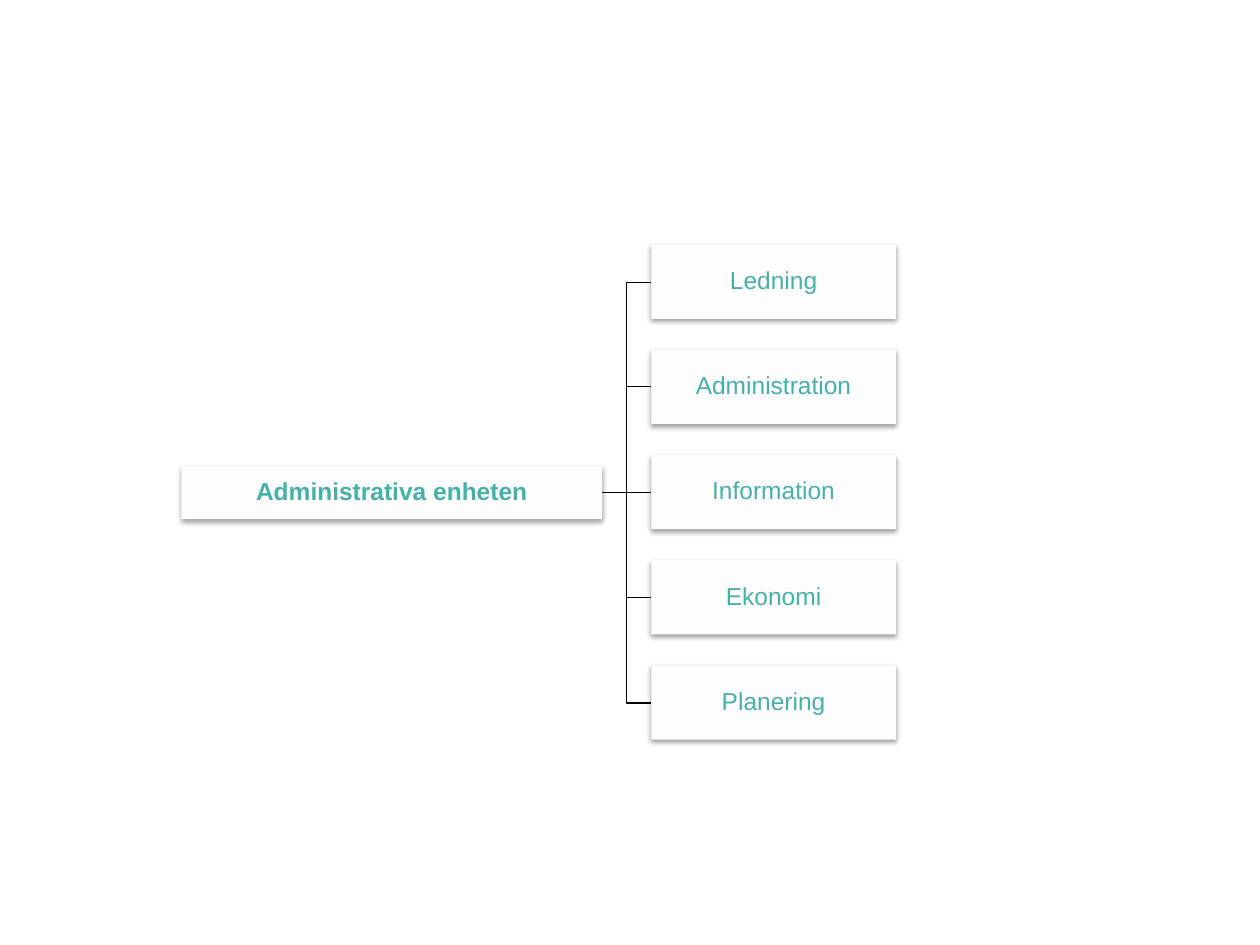
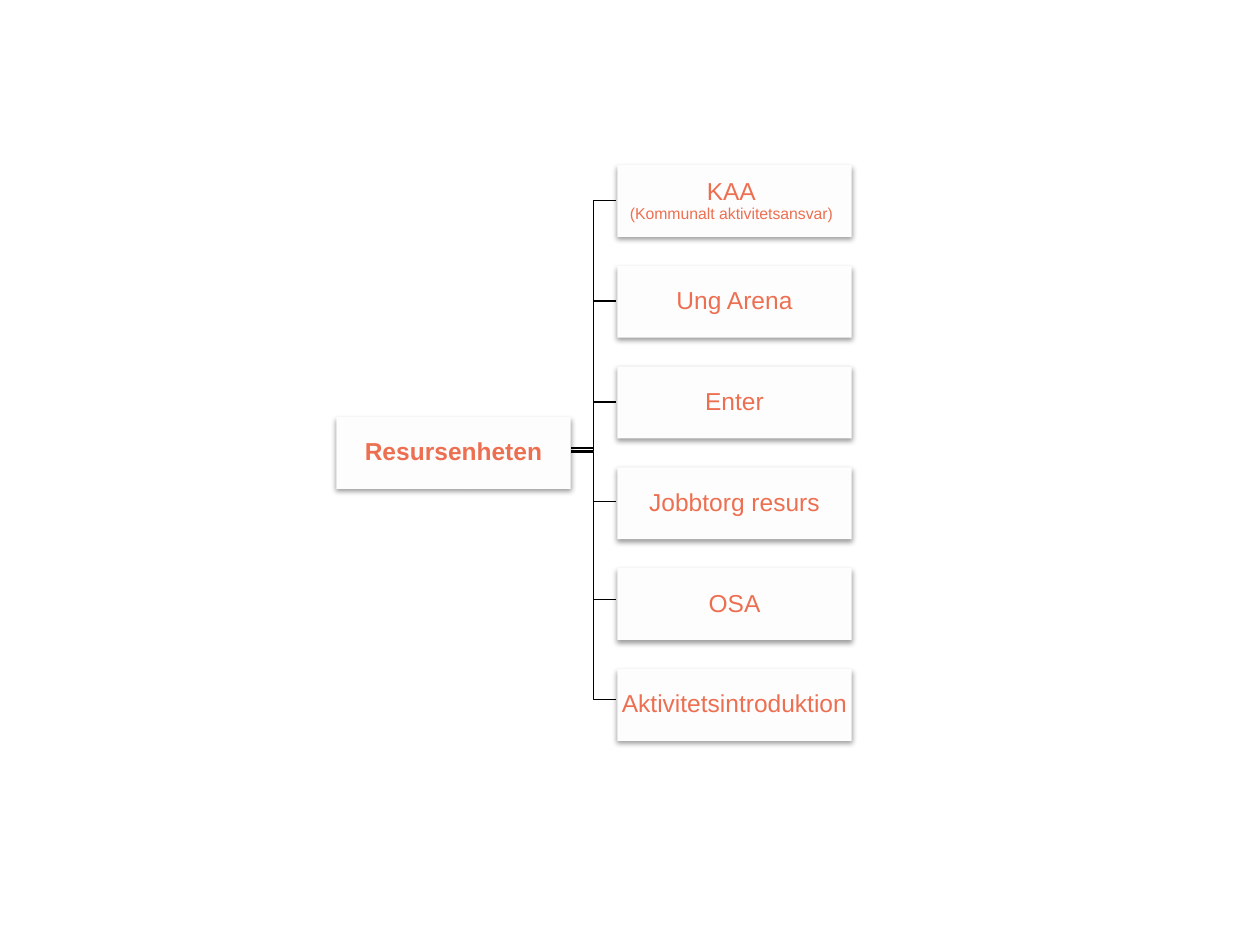
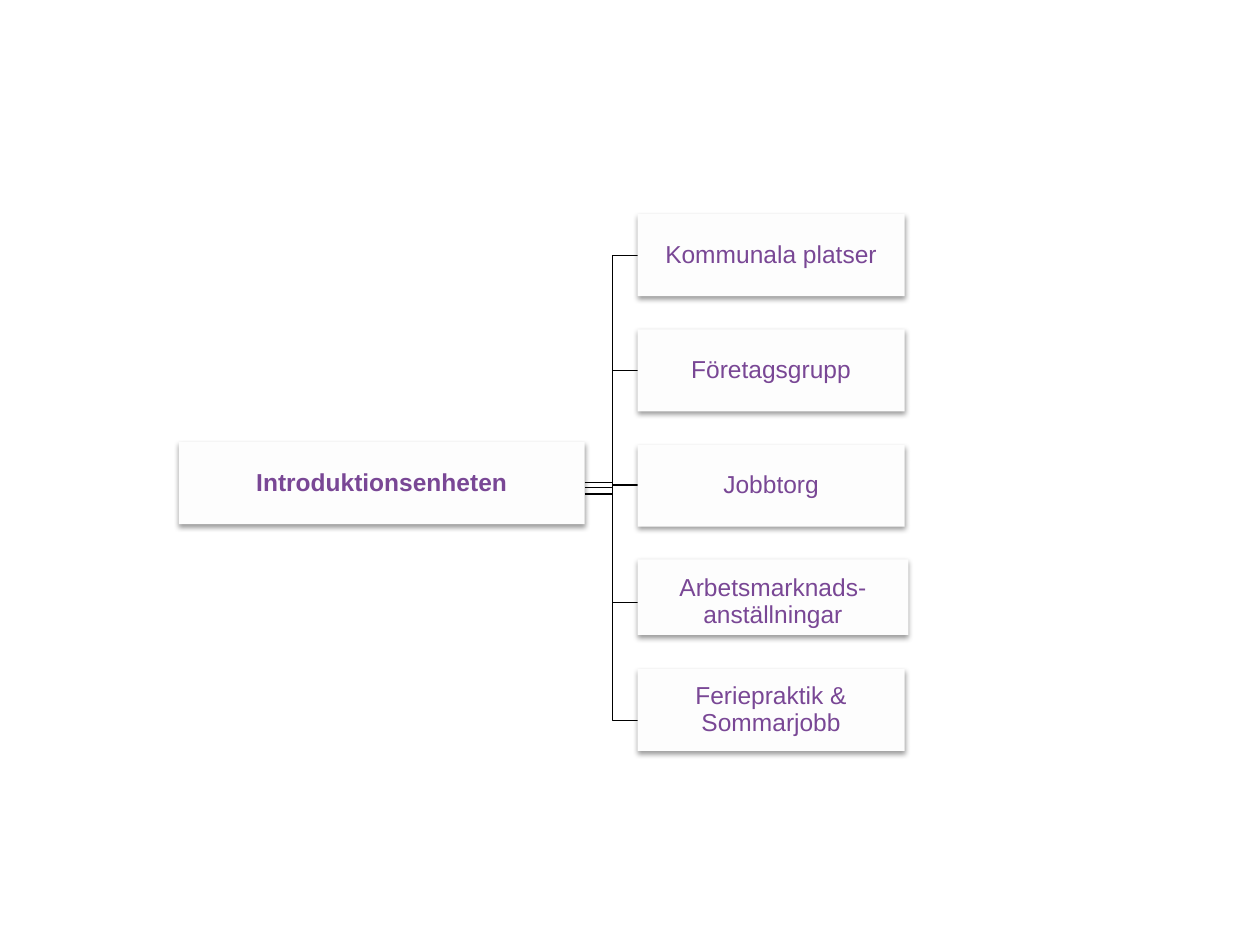
"""Build three organisation charts, one unit with its branches per slide."""
from dataclasses import dataclass
from typing import Any, NamedTuple, Optional

from lxml import etree
from pptx import Presentation
from pptx import util as u
from pptx.dml.color import RGBColor
from pptx.enum import shapes, text
from pptx.oxml import ns

TEAL = RGBColor(0x45, 0xB1, 0xAB)
CORAL = RGBColor(0xED, 0x6F, 0x51)
PURPLE = RGBColor(0x79, 0x47, 0x95)
CARD = RGBColor(0xFD, 0xFD, 0xFD)
BLACK = RGBColor(0, 0, 0)

LABEL_SIZE = 14
NOTE_SIZE = 9
INSET = u.Inches(0.01)
FRAME_FORMAT = {
    "word_wrap": True,
    "vertical_anchor": text.MSO_ANCHOR.MIDDLE,
    "margin_left": INSET,
    "margin_top": INSET,
    "margin_right": INSET,
    "margin_bottom": INSET,
}
PARAGRAPH_FORMAT = {"alignment": text.PP_ALIGN.CENTER, "line_spacing": 0.9}
SHADOW_FORMAT = {"blurRad": u.Pt(3.1), "dist": u.Pt(1.6), "dir": 90 * 60000, "rotWithShape": 0}
SHADOW_ALPHA = 38000


class Box(NamedTuple):
    """Place and size of a card in inches."""

    left: float
    top: float
    width: float
    height: float


@dataclass(frozen=True)
class Branch:
    """A part of the unit and the heights where its line starts and ends."""

    label: str
    line_start: float
    line_end: float
    note: str = ""
    box: Optional[Box] = None
    margins: tuple[tuple[str, float], ...] = ()


@dataclass(frozen=True)
class Unit:
    """A unit card and the evenly spaced column of its branches."""

    name: str
    color: RGBColor
    box: Box
    first_box: Box
    last_top: float
    line_right: float
    branches: tuple[Branch, ...]

    def branch_box(self, index: int) -> Box:
        """Return the place of a branch card in the column."""
        pitch = (self.last_top - self.first_box.top) / (len(self.branches) - 1)
        return self.first_box._replace(top=self.first_box.top + index * pitch)


UNITS = (
    Unit(
        "Administrativa enheten", TEAL, Box(1.44, 3.7, 3.34, 0.42),
        Box(5.17, 1.94, 1.94, 0.59), 5.28, 5.17,
        (
            Branch("Ledning", 3.91, 2.24),
            Branch("Administration", 3.91, 3.07),
            Branch("Information", 3.91, 3.91),
            Branch("Ekonomi", 3.91, 4.74),
            Branch("Planering", 3.91, 5.58),
        ),
    ),
    Unit(
        "Resursenheten", CORAL, Box(2.67, 3.31, 1.86, 0.57),
        Box(4.9, 1.31, 1.86, 0.57), 5.31, 4.89,
        (
            Branch("KAA", 3.55, 1.59, "(Kommunalt aktivitetsansvar)",
                   margins=(("margin_right", 0.06),)),
            Branch("Ung Arena", 3.56, 2.39),
            Branch("Enter", 3.58, 3.19),
            Branch("Jobbtorg resurs", 3.59, 3.98),
            Branch("OSA", 3.59, 4.76),
            Branch("Aktivitetsintroduktion", 3.59, 5.55),
        ),
    ),
    Unit(
        "Introduktionsenheten", PURPLE, Box(1.42, 3.51, 3.22, 0.65),
        Box(5.06, 1.7, 2.12, 0.65), 5.36, 5.08,
        (
            Branch("Kommunala platser", 3.92, 2.03),
            Branch("Företagsgrupp", 3.87, 2.94),
            Branch("Jobbtorg", 3.83, 3.85),
            Branch("Arbetsmarknads-anställningar", 3.83, 4.78,
                   box=Box(5.06, 4.44, 2.15, 0.6), margins=(("margin_top", 0.09),)),
            Branch("Feriepraktik &\vSommarjobb", 3.83, 5.72,
                   box=Box(5.06, 5.31, 2.12, 0.65)),
        ),
    ),
)


def apply_format(target: Any, values: dict[str, Any]) -> None:
    """Set each named attribute of the target."""
    for name, value in values.items():
        setattr(target, name, value)


def add_shadow(card: Any) -> None:
    """Give a card a soft shadow below it."""
    card.shadow.inherit = False
    effects = card._element.spPr.find(ns.qn("a:effectLst"))
    shadow = etree.SubElement(effects, ns.qn("a:outerShdw"))
    for name, value in SHADOW_FORMAT.items():
        shadow.set(name, str(int(value)))
    color = etree.SubElement(shadow, ns.qn("a:srgbClr"), val=str(BLACK))
    etree.SubElement(color, ns.qn("a:alpha"), val=str(SHADOW_ALPHA))


def add_words(paragraph: Any, words: str, size: float, color: RGBColor, bold: bool) -> None:
    """Add runs in the card font, one for each line of the words."""
    for index, line in enumerate(words.split("\v")):
        if index:
            paragraph.add_line_break()
        run = paragraph.add_run()
        run.text = line
        apply_format(run.font, {"name": "Arial", "size": u.Pt(size), "bold": bold})
        run.font.color.rgb = color


def add_card(slide: Any, box: Box, label: str, color: RGBColor, bold: bool = False,
             note: str = "", margins: tuple[tuple[str, float], ...] = ()) -> None:
    """Draw a shadowed card with its label and an optional small note."""
    card = slide.shapes.add_shape(shapes.MSO_SHAPE.RECTANGLE, *map(u.Inches, box))
    card.fill.solid()
    card.fill.fore_color.rgb = CARD
    card.line.fill.background()
    add_shadow(card)
    frame = card.text_frame
    apply_format(frame, FRAME_FORMAT)
    apply_format(frame, {name: u.Inches(value) for name, value in margins})
    paragraph = frame.paragraphs[0]
    apply_format(paragraph, PARAGRAPH_FORMAT)
    add_words(paragraph, label, LABEL_SIZE, color, bold)
    if note:
        paragraph.add_line_break()
        add_words(paragraph, note, NOTE_SIZE, color, bold)


def add_branch_line(slide: Any, left: float, right: float, start: float, end: float) -> None:
    """Draw a straight or stepped line from the unit to a branch."""
    x1, x2, y1, y2 = map(u.Inches, (left, right, start, end))
    if y1 == y2:
        line = slide.shapes.add_connector(shapes.MSO_CONNECTOR.STRAIGHT, x1, y1, x2, y2)
        etree.SubElement(line._element.spPr, ns.qn("a:effectLst"))
    else:
        middle = (x1 + x2) // 2
        builder = slide.shapes.build_freeform(x1, y1)
        builder.add_line_segments([(middle, y1), (middle, y2), (x2, y2)], close=False)
        line = builder.convert_to_shape()
        line.fill.background()
        line.shadow.inherit = False
    line.line.color.rgb = BLACK
    line.line.width = u.Pt(0.75)


def add_unit(slide: Any, unit: Unit) -> None:
    """Draw the lines, the unit card and the branch cards."""
    unit_right = unit.box.left + unit.box.width
    for branch in reversed(unit.branches):
        add_branch_line(slide, unit_right, unit.line_right, branch.line_start, branch.line_end)
    add_card(slide, unit.box, unit.name, unit.color, bold=True)
    for index, branch in enumerate(unit.branches):
        add_card(slide, branch.box or unit.branch_box(index), branch.label, unit.color,
                 note=branch.note, margins=branch.margins)


def main() -> None:
    """Build and save the presentation."""
    deck = Presentation()
    apply_format(deck, {"slide_width": u.Inches(10), "slide_height": u.Inches(7.5)})
    for unit in UNITS:
        add_unit(deck.slides.add_slide(deck.slide_layouts[6]), unit)
    deck.save("out.pptx")


if __name__ == "__main__":
    main()
